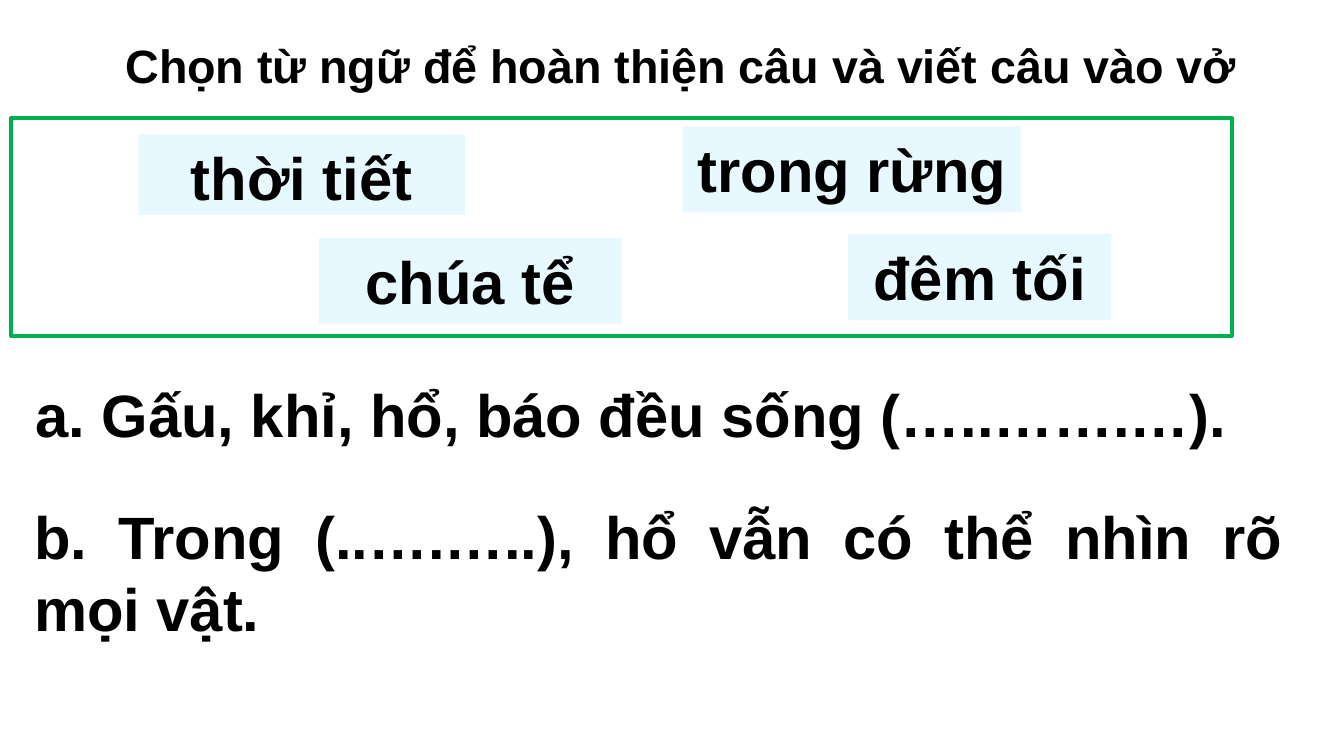
from dataclasses import dataclass

from pptx import Presentation
from pptx.dml.color import RGBColor as Color
from pptx.enum.shapes import MSO_SHAPE as Shape
from pptx.enum.text import MSO_ANCHOR as Anchor, PP_ALIGN as Align
from pptx.util import Inches, Pt


@dataclass(frozen=True)
class Theme:
    font: str = "Arial"
    ink: str = "000000"
    frame: str = "00B050"
    card: str = "E7F9FF"
    line: float = 2
    title: float = 25
    body: float = 32


THEME = Theme()
COLS, ROWS = 100, 56.25
CELL = Inches(0.1)

# Places are left, top, width and height in grid cells.
TITLE = ("Chọn từ ngữ để hoàn thiện câu và viết câu vào vở", (8.35, 2.25, 87.1, 5.2))
FRAME = (0.8, 8.8, 90.85, 16.2)
WORDS = [
    ("thời tiết", (10.3, 10, 24.3, 6)),
    ("đêm tối", (63.1, 17.4, 19.6, 6.4)),
    ("chúa tể", (23.75, 17.7, 22.5, 6.4)),
    ("trong rừng", (50.8, 9.4, 25.2, 6.4)),
]
TASKS = [
    ("a. Gấu, khỉ, hổ, báo đều sống (…..…….…).", (1.65, 27.6, 95, 6.4)),
    ("b. Trong (..….…..), hổ vẫn có thể nhìn rõ mọi vật.", (1.55, 36.7, 95, 11.8)),
]


def grid(place):
    """Turn grid cells into slide lengths."""
    return [round(n * CELL) for n in place]


def write(shape, text, size=THEME.body, align=Align.JUSTIFY):
    frame = shape.text_frame
    frame.word_wrap = True
    frame.vertical_anchor = Anchor.TOP
    para = frame.paragraphs[0]
    para.alignment = align
    run = para.add_run()
    run.text = text
    font = run.font
    font.name, font.size, font.bold = THEME.font, Pt(size), True
    font.color.rgb = Color.from_string(THEME.ink)


def label(slide, text, place, **style):
    write(slide.shapes.add_textbox(*grid(place)), text, **style)


def panel(slide, place, fill=None, line=None):
    """Add a rectangle with an optional fill and outline."""
    shape = slide.shapes.add_shape(Shape.RECTANGLE, *grid(place))
    shape.shadow.inherit = False
    if fill:
        shape.fill.solid()
        shape.fill.fore_color.rgb = Color.from_string(fill)
    else:
        shape.fill.background()
    if line:
        shape.line.color.rgb = Color.from_string(line)
        shape.line.width = Pt(THEME.line)
    else:
        shape.line.fill.background()
    return shape


def card(slide, text, place):
    write(panel(slide, place, fill=THEME.card), text, align=Align.CENTER)


def main():
    deck = Presentation()
    deck.slide_width, deck.slide_height = grid((COLS, ROWS))
    slide = deck.slides.add_slide(deck.slide_layouts[6])
    panel(slide, FRAME, line=THEME.frame)
    label(slide, *TITLE, size=THEME.title)
    for text, place in TASKS:
        label(slide, text, place)
    for text, place in WORDS:
        card(slide, text, place)
    deck.save("out.pptx")


if __name__ == "__main__":
    main()
